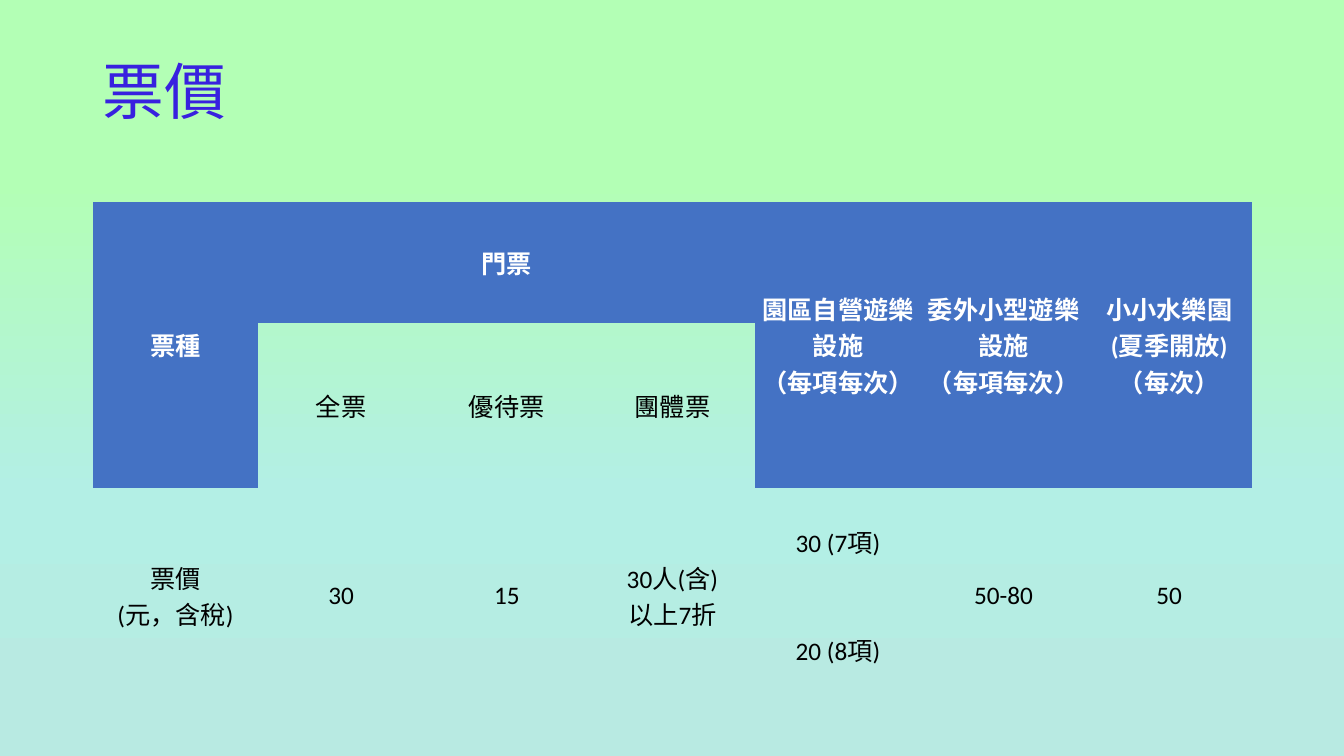
"""Build the ticket price slide: a title above a table with merged headings."""
import copy

import pptx
import pptx.dml.color
import pptx.enum.text
import pptx.oxml.ns
import pptx.util

Inches, Pt = pptx.util.Inches, pptx.util.Pt
RGB = pptx.dml.color.RGBColor.from_string
qn = pptx.oxml.ns.qn
MIDDLE = pptx.enum.text.MSO_ANCHOR.MIDDLE

THEME = {
    "backdrop": [(0.24, "B3FFB5"), (0.65, "B3EFE5"), (0.94, "B8EAE2")],
    "title": {"name": "Noto Sans CJK JP", "size": Pt(44), "color": "3821DF"},
    "heading": {"name": "Calibri", "size": Pt(18), "bold": True, "color": "FFFFFF"},
    "entry": {"name": "Calibri", "size": Pt(18), "bold": False, "color": "000000"},
    "heading_fill": "4472C4",
    "east_asian": "Noto Sans CJK JP",
    "plain_table": "{2D5ABB26-0587-4C30-8999-92F81FD0307C}",
}
LEFT, WIDTH = Inches(0.92), Inches(11.5)
ROW_HEIGHTS = [1.2, 1.64, 1.07, 1.07]
PRICES = [
    ["票種", "門票", "", "", "園區自營遊樂設施\v（每項每次）",
     "委外小型遊樂設施\v（每項每次）", "小小水樂園\v(夏季開放)\v（每次）"],
    ["", "全票", "優待票", "團體票", "", "", ""],
    ["票價\v(元，含稅)", "30", "15", "30人(含)\v以上7折", "30 (7項)", "50-80", "50"],
    ["", "", "", "", "20 (8項)", "", ""],
]
TALL_HEADINGS = [0, 4, 5, 6]
TALL_PRICES = [0, 1, 2, 3, 5, 6]


def style_runs(frame, look):
    """Apply one theme text style to every run of a frame."""
    for run in (r for p in frame.paragraphs for r in p.runs):
        for key, value in look.items():
            if key == "color":
                run.font.color.rgb = RGB(value)
            else:
                setattr(run.font, key, value)
        latin = run.font._element.find(qn("a:latin"))
        east_asian = copy.deepcopy(latin)
        east_asian.tag = qn("a:ea")
        east_asian.set("typeface", THEME["east_asian"])
        latin.addnext(east_asian)


deck = pptx.Presentation()
deck.slide_width, deck.slide_height = Inches(13.33), Inches(7.5)
slide = deck.slides.add_slide(deck.slide_layouts[5])

backdrop = slide.background.fill
backdrop.gradient()
backdrop.gradient_angle = 270
stops = slide.element.find(".//" + qn("a:gsLst"))
stops.append(copy.deepcopy(stops[0]))
for stop, (position, color) in zip(backdrop.gradient_stops, THEME["backdrop"]):
    stop.position, stop.color.rgb = position, RGB(color)

title = slide.shapes.title
title.left, title.top, title.width, title.height = LEFT, Inches(0.21), WIDTH, Inches(1.45)
title.text_frame.text = "票價"
title.text_frame.vertical_anchor = MIDDLE
title.text_frame.auto_size = pptx.enum.text.MSO_AUTO_SIZE.NONE
title.text_frame.paragraphs[0].alignment = pptx.enum.text.PP_ALIGN.LEFT
title.text_frame.paragraphs[0].line_spacing = 0.9
style_runs(title.text_frame, THEME["title"])

prices = slide.shapes.add_table(
    len(PRICES), len(PRICES[0]), LEFT, Inches(2), WIDTH, Inches(sum(ROW_HEIGHTS))
).table
prices._tbl.tblPr.find(qn("a:tableStyleId")).text = THEME["plain_table"]
prices.horz_banding = False
for row, height in zip(prices.rows, ROW_HEIGHTS):
    row.height = Inches(height)

cell_format = {"vertical_anchor": MIDDLE}
cell_format.update({f"margin_{side}": Inches(0.03) for side in ("left", "right", "top", "bottom")})
for r, entries in enumerate(PRICES):
    for c, entry in enumerate(entries):
        cell = prices.cell(r, c)
        for key, value in cell_format.items():
            setattr(cell, key, value)
        is_heading = r == 0 or (r == 1 and c in TALL_HEADINGS)
        if is_heading:
            cell.fill.solid()
            cell.fill.fore_color.rgb = RGB(THEME["heading_fill"])
        else:
            cell.fill.background()
        cell.text_frame.text = entry
        cell.text_frame.paragraphs[0].alignment = pptx.enum.text.PP_ALIGN.CENTER
        style_runs(cell.text_frame, THEME["heading" if is_heading else "entry"])

prices.cell(0, 1).merge(prices.cell(0, 3))
for top, columns in ((0, TALL_HEADINGS), (2, TALL_PRICES)):
    for c in columns:
        prices.cell(top, c).merge(prices.cell(top + 1, c))

deck.save("out.pptx")
